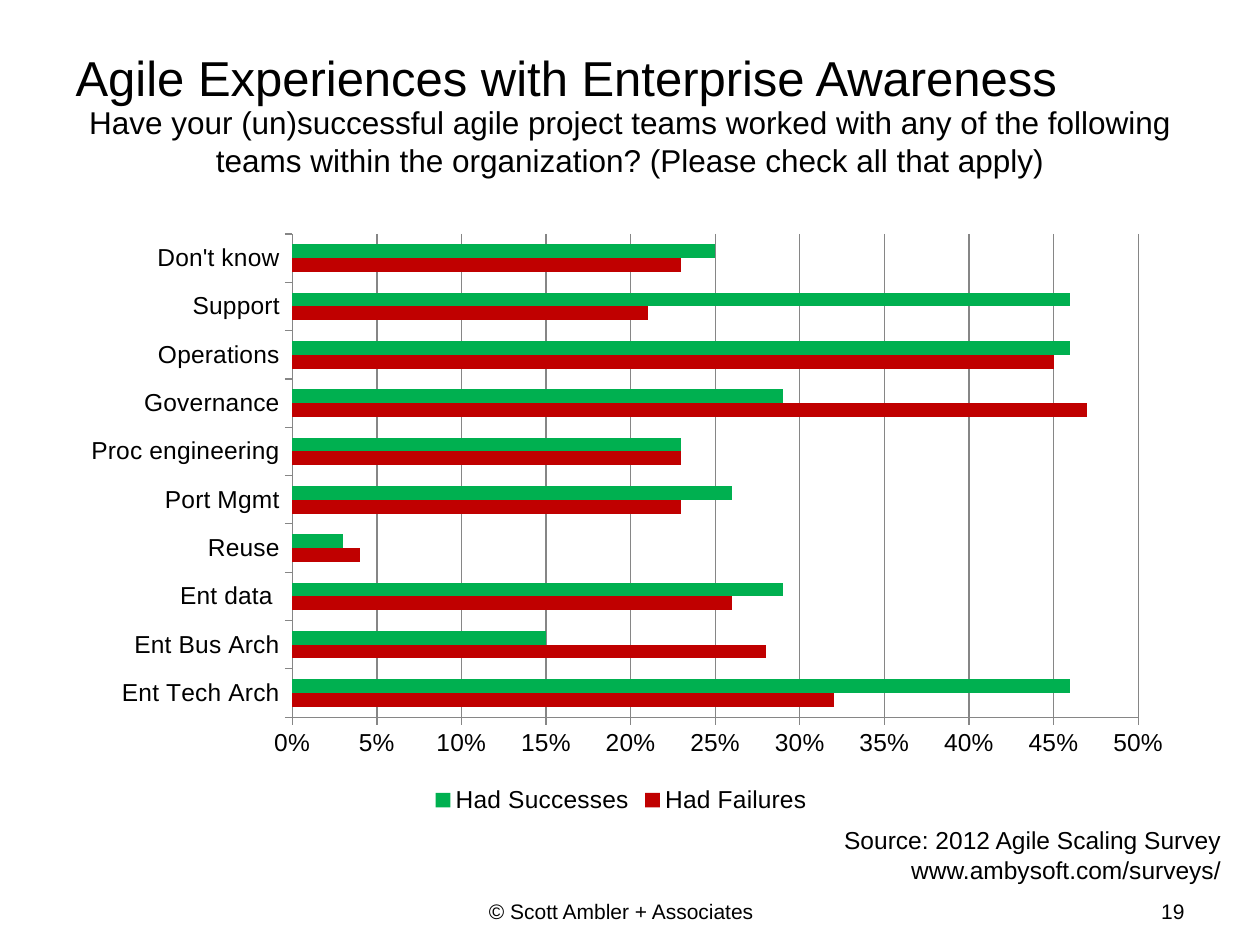
import dataclasses

import pptx
import pptx.chart.data
import pptx.dml.color
import pptx.enum.chart
import pptx.enum.text
import pptx.oxml
import pptx.oxml.ns
import pptx.util

ALIGN = pptx.enum.text.PP_ALIGN
ANCHOR = pptx.enum.text.MSO_ANCHOR


@dataclasses.dataclass(frozen=True)
class Theme:
    font: str = "Arial"
    ink: str = "000000"
    grid: str = "868686"
    success: str = "00B050"
    failure: str = "C00000"
    title_size: int = 28
    question_size: int = 18
    label_size: int = 14
    footer_size: int = 12


THEME = Theme()
WIDTH, HEIGHT = pptx.util.Inches(10), pptx.util.Inches(7.5)

# Category, share with successes, share with failures; bottom bar first
SURVEY = [
    ("Ent Tech Arch", 0.46, 0.32),
    ("Ent Bus Arch", 0.15, 0.28),
    ("Ent data ", 0.29, 0.26),
    ("Reuse", 0.03, 0.04),
    ("Port Mgmt", 0.26, 0.23),
    ("Proc engineering", 0.23, 0.23),
    ("Governance", 0.29, 0.47),
    ("Operations", 0.46, 0.45),
    ("Support", 0.46, 0.21),
    ("Don't know", 0.25, 0.23),
]


def region(left, top, width, height):
    """Turn percentages of the slide's size into a box."""
    return (int(WIDTH * left / 100), int(HEIGHT * top / 100),
            int(WIDTH * width / 100), int(HEIGHT * height / 100))


def rgb(value):
    return pptx.dml.color.RGBColor.from_string(value)


def style_font(font, size):
    font.name = THEME.font
    font.size = pptx.util.Pt(size)
    font.color.rgb = rgb(THEME.ink)


def write(frame, text, *, size, align=ALIGN.LEFT, anchor=ANCHOR.TOP, wrap=True):
    """Fill a text frame, one paragraph for each line of text."""
    frame.text = text
    frame.auto_size = pptx.enum.text.MSO_AUTO_SIZE.NONE
    frame.word_wrap = wrap
    frame.vertical_anchor = anchor
    for paragraph in frame.paragraphs:
        paragraph.alignment = align
        style_font(paragraph.font, size)


def add_label(slide, box, text, **text_format):
    write(slide.shapes.add_textbox(*box).text_frame, text, **text_format)


def add_heading(slide, title_box, question_box):
    title = slide.shapes.title
    title.left, title.top, title.width, title.height = title_box
    write(title.text_frame, "Agile Experiences with Enterprise Awareness",
          size=THEME.title_size, anchor=ANCHOR.MIDDLE)
    add_label(slide, question_box,
              "Have your (un)successful agile project teams worked with any of the "
              "following teams within the organization? (Please check all that apply)",
              size=THEME.question_size, align=ALIGN.CENTER)


def set_plot_area(chart, x, y, w, h):
    """Fix the inner plot area as shares of the chart's box."""
    plot_area = chart.element.find(".//" + pptx.oxml.ns.qn("c:plotArea"))
    for automatic in plot_area.findall(pptx.oxml.ns.qn("c:layout")):
        plot_area.remove(automatic)
    plot_area.insert(0, pptx.oxml.parse_xml(
        f'<c:layout {pptx.oxml.ns.nsdecls("c")}><c:manualLayout>'
        '<c:layoutTarget val="inner"/><c:xMode val="edge"/><c:yMode val="edge"/>'
        f'<c:x val="{x}"/><c:y val="{y}"/><c:w val="{w}"/><c:h val="{h}"/>'
        '</c:manualLayout></c:layout>'))


def add_survey_chart(slide, box):
    categories, successes, failures = zip(*SURVEY)
    survey = pptx.chart.data.CategoryChartData(number_format="0%")
    survey.categories = categories
    survey.add_series("Had Failures", failures)
    survey.add_series("Had Successes", successes)
    chart = slide.shapes.add_chart(
        pptx.enum.chart.XL_CHART_TYPE.BAR_CLUSTERED, *box, survey).chart
    style_font(chart.font, THEME.label_size)
    chart.has_title = False
    set_plot_area(chart, 0.21, 0.062, 0.746, 0.775)

    # Bars
    bars = chart.plots[0]
    bars.gap_width = 150
    bars.vary_by_categories = False
    for series, color in zip(bars.series, (THEME.failure, THEME.success)):
        series.format.fill.solid()
        series.format.fill.fore_color.rgb = rgb(color)
        series.invert_if_negative = False

    # Axes and gridlines
    share_axis = chart.value_axis
    share_axis.minimum_scale, share_axis.maximum_scale = 0, 0.5
    share_axis.major_unit = 0.05
    share_axis.has_major_gridlines = True
    share_axis.tick_labels.number_format = "0%"
    share_axis.tick_labels.number_format_is_linked = False
    for axis in (chart.category_axis, share_axis):
        axis.major_tick_mark = pptx.enum.chart.XL_TICK_MARK.OUTSIDE
        axis.minor_tick_mark = pptx.enum.chart.XL_TICK_MARK.NONE
    for lines in (chart.category_axis, share_axis, share_axis.major_gridlines):
        lines.format.line.color.rgb = rgb(THEME.grid)
        lines.format.line.width = pptx.util.Pt(0.75)

    # Legend
    chart.has_legend = True
    chart.legend.position = pptx.enum.chart.XL_LEGEND_POSITION.BOTTOM
    chart.legend.include_in_layout = False


def add_footer(slide, source_box, copyright_box, number_box):
    add_label(slide, source_box,
              "Source: 2012 Agile Scaling Survey\nwww.ambysoft.com/surveys/",
              size=THEME.label_size, align=ALIGN.RIGHT, wrap=False)
    add_label(slide, copyright_box, "© Scott Ambler + Associates",
              size=THEME.footer_size, align=ALIGN.RIGHT)
    add_label(slide, number_box, "19",
              size=THEME.footer_size, align=ALIGN.RIGHT)


def main():
    deck = pptx.Presentation()
    deck.slide_width, deck.slide_height = WIDTH, HEIGHT
    slide = deck.slides.add_slide(deck.slide_layouts.get_by_name("Title Only"))
    add_heading(slide, region(5, 4, 90, 8.27), region(5.9, 10.27, 88.2, 9.47))
    add_survey_chart(slide, region(4.3, 20.67, 90, 66))
    add_footer(slide, region(65.8, 86.67, 32.1, 7.6),
               region(10.8, 94.4, 50, 3.6), region(85, 94.4, 10, 3.6))
    deck.save("out.pptx")


if __name__ == "__main__":
    main()
